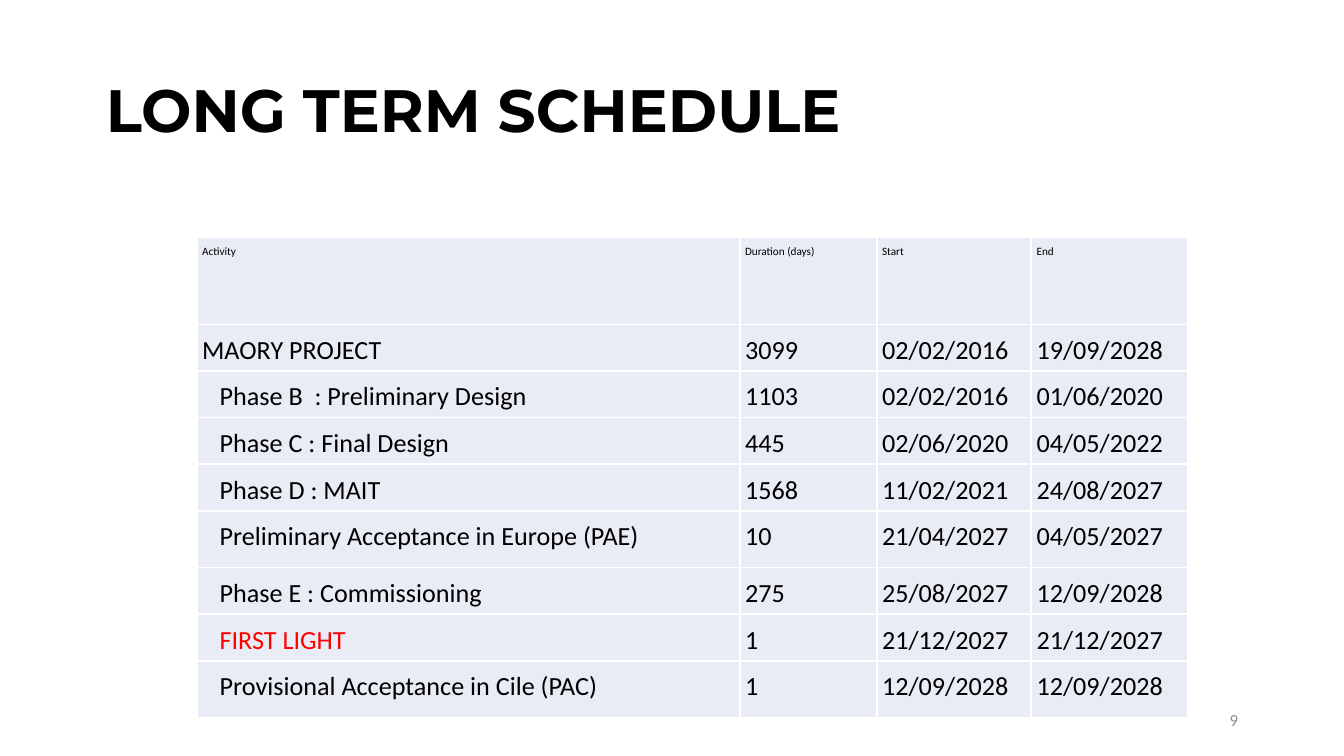
from lxml import etree
from pptx import Presentation
from pptx.dml.color import RGBColor
from pptx.enum.text import MSO_ANCHOR, PP_ALIGN
from pptx.oxml.ns import qn
from pptx.util import Cm, Pt

MIDDLE, TOP = MSO_ANCHOR.MIDDLE, MSO_ANCHOR.TOP
LEFT, RIGHT = PP_ALIGN.LEFT, PP_ALIGN.RIGHT

# Content
TITLE = "LONG TERM SCHEDULE"
PAGE_NUMBER = "9"
HEADER = ("Activity", "Duration (days)", "Start", "End")
PROJECT = ("MAORY PROJECT", "3099", "02/02/2016", "19/09/2028")
FIRST_LIGHT = "FIRST LIGHT"
PHASES = [
    ("Phase B  : Preliminary Design", "1103", "02/02/2016", "01/06/2020"),
    ("Phase C : Final Design", "445", "02/06/2020", "04/05/2022"),
    ("Phase D : MAIT", "1568", "11/02/2021", "24/08/2027"),
    ("Preliminary Acceptance in Europe (PAE)", "10", "21/04/2027", "04/05/2027"),
    ("Phase E : Commissioning", "275", "25/08/2027", "12/09/2028"),
    (FIRST_LIGHT, "1", "21/12/2027", "21/12/2027"),
    ("Provisional Acceptance in Cile (PAC)", "1", "12/09/2028", "12/09/2028"),
]
ROWS = [HEADER, PROJECT] + PHASES

# Style
COLORS = {"text": "000000", "highlight": "FF0000", "number": "8C8C8C",
          "cell": "E9EBF5", "border": "FFFFFF"}
COLUMN_WIDTHS = (10.26, 2.59, 2.92, 2.95)
HEADER_HEIGHT, ROW_HEIGHT, ACCEPTANCE_HEIGHT = 1.65, 0.76, 1.07
CELL_MARGIN, PHASE_INDENT = 0.1, 0.33


def format_paragraph(paragraph, size, color, font="Calibri", bold=False,
                     align=LEFT, spacing=1.0):
    paragraph.alignment = align
    paragraph.line_spacing = spacing
    for run in paragraph.runs:
        run.font.name = font
        run.font.size = Pt(size)
        run.font.bold = bold
        run.font.color.rgb = RGBColor.from_string(COLORS[color])


def add_text(slide, text, left, top, width, height, **style):
    box = slide.shapes.add_textbox(Cm(left), Cm(top), Cm(width), Cm(height))
    frame = box.text_frame
    frame.word_wrap = True
    frame.vertical_anchor = MIDDLE
    frame.text = text
    format_paragraph(frame.paragraphs[0], **style)


def add_borders(cell):
    properties = cell._tc.get_or_add_tcPr()
    for side in ("a:lnL", "a:lnR", "a:lnT", "a:lnB"):
        line = etree.SubElement(properties, qn(side), w=str(Pt(1)))
        fill = etree.SubElement(line, qn("a:solidFill"))
        etree.SubElement(fill, qn("a:srgbClr"), val=COLORS["border"])


def row_height(row):
    if row is HEADER:
        return HEADER_HEIGHT
    return ACCEPTANCE_HEIGHT if "Acceptance" in row[0] else ROW_HEIGHT


def add_schedule(slide, left, top):
    heights = [row_height(row) for row in ROWS]
    table = slide.shapes.add_table(
        len(ROWS), len(HEADER), Cm(left), Cm(top),
        Cm(sum(COLUMN_WIDTHS)), Cm(sum(heights))).table
    table.first_row = table.horz_banding = False
    for column, width in zip(table.columns, COLUMN_WIDTHS):
        column.width = Cm(width)

    for row_index, row in enumerate(ROWS):
        table.rows[row_index].height = Cm(heights[row_index])
        for column_index, text in enumerate(row):
            cell = table.cell(row_index, column_index)
            indent = PHASE_INDENT if row in PHASES and column_index == 0 else 0
            cell.margin_left = Cm(CELL_MARGIN + indent)
            cell.margin_right = cell.margin_top = cell.margin_bottom = Cm(CELL_MARGIN)
            cell.vertical_anchor = TOP
            add_borders(cell)
            cell.fill.solid()
            cell.fill.fore_color.rgb = RGBColor.from_string(COLORS["cell"])
            cell.text_frame.text = text
            format_paragraph(cell.text_frame.paragraphs[0],
                             size=6 if row is HEADER else 14,
                             color="highlight" if text == FIRST_LIGHT else "text",
                             spacing=1.15)


def main():
    presentation = Presentation()
    presentation.slide_width, presentation.slide_height = Cm(25.4), Cm(14.29)
    slide = presentation.slides.add_slide(presentation.slide_layouts[6])

    # Title, schedule table and page number
    add_text(slide, TITLE, 1.75, 0.76, 16.64, 2.77, size=32, color="text",
             font="Montserrat", bold=True, spacing=0.9)
    add_schedule(slide, 3.72, 4.48)
    add_text(slide, PAGE_NUMBER, 17.93, 13.23, 5.72, 0.76, size=9,
             color="number", align=RIGHT)

    presentation.save("out.pptx")


if __name__ == "__main__":
    main()
